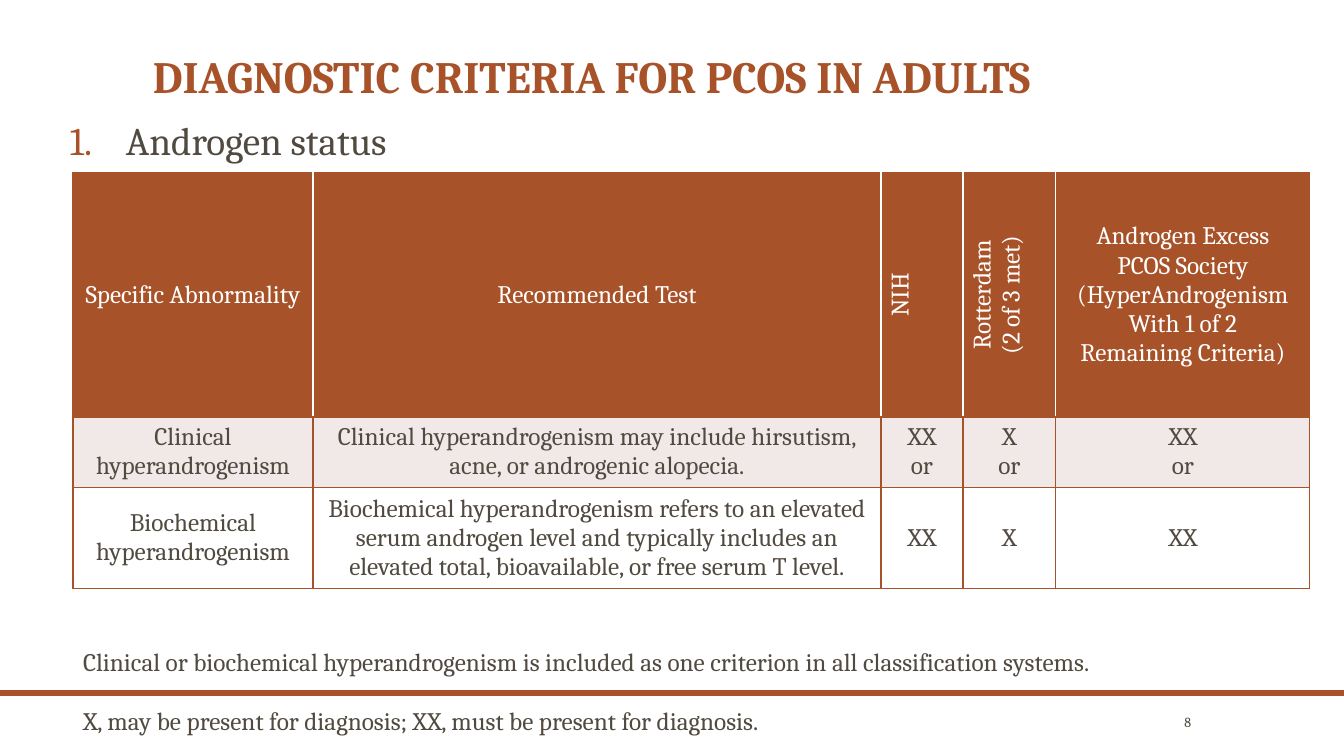
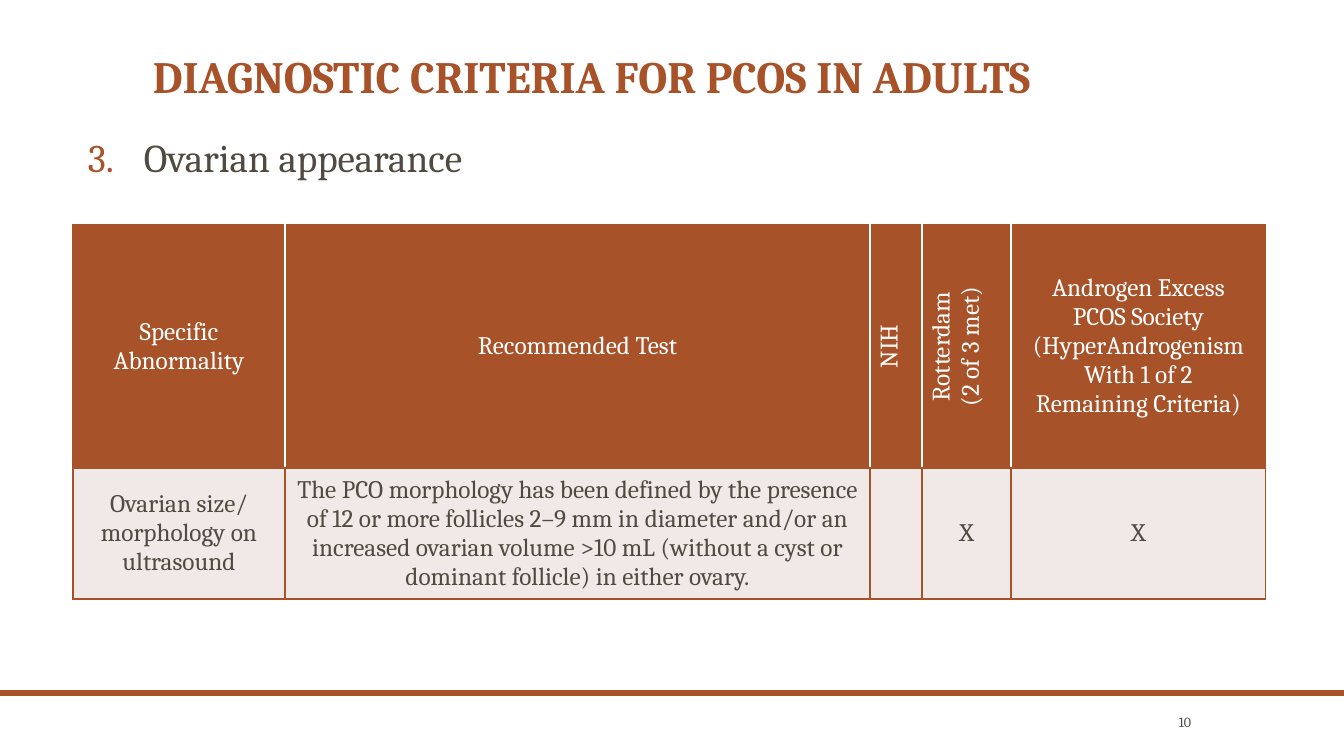
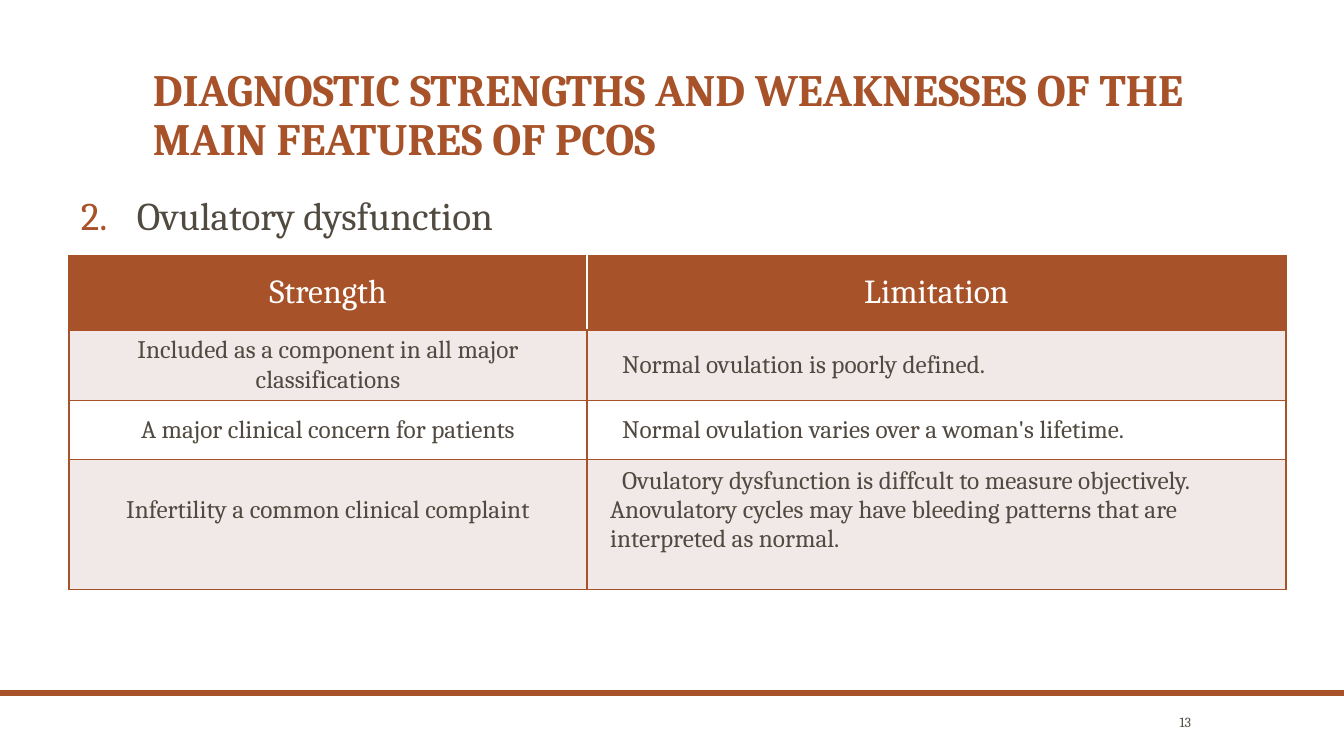
from lxml.etree import SubElement
from pptx import Presentation
from pptx.dml.color import RGBColor
from pptx.enum.shapes import MSO_SHAPE as Shape
from pptx.enum.text import MSO_ANCHOR as Anchor, MSO_AUTO_SIZE as AutoSize, PP_ALIGN as Align
from pptx.oxml.ns import qn
from pptx.util import Pt

WIDTH, HEIGHT = 1344, 756
EMU_PER_PX = 12192000 / WIDTH

RUST = RGBColor(0xA8, 0x52, 0x29)
INK = RGBColor(0x51, 0x4A, 0x40)
WHITE = RGBColor(0xFF, 0xFF, 0xFF)
BLUSH = RGBColor(0xF1, 0xE9, 0xE8)
FONT = "Cambria"

CRITERIA_TITLE = "DIAGNOSTIC CRITERIA FOR PCOS IN ADULTS"
FEATURES_TITLE = "DIAGNOSTIC STRENGTHS AND WEAKNESSES OF THE MAIN FEATURES OF PCOS"
CRITERIA_HEADER = [
    "Specific Abnormality",
    "Recommended Test",
    "NIH",
    "Rotterdam\v(2 of 3 met)",
    "Androgen Excess\vPCOS Society\v(HyperAndrogenism\vWith 1 of 2\vRemaining Criteria)",
]
VERTICAL_COLUMNS = (2, 3)
ANDROGEN_ROWS = [
    ["Clinical\vhyperandrogenism",
     "Clinical hyperandrogenism may include hirsutism, acne, or androgenic alopecia.",
     "XX\nor", "X\nor", "XX\nor"],
    ["Biochemical\vhyperandrogenism",
     "Biochemical hyperandrogenism refers to an elevated serum androgen level and typically "
     "includes an elevated total, bioavailable, or free serum T level.",
     "XX", "X", "XX"],
]
ANDROGEN_NOTE = (
    "Clinical or biochemical hyperandrogenism is included as one criterion in all "
    "classification systems.\n"
    "X, may be present for diagnosis; XX, must be present for diagnosis."
)
OVARIAN_ROWS = [
    ["Ovarian size/\nmorphology on\nultrasound",
     "The PCO morphology has been defined by the presence of 12 or more follicles 2–9 mm in "
     "diameter and/or an increased ovarian volume >10 mL (without a cyst or dominant follicle) "
     "in either ovary.",
     "", "X", "X"],
]
OVULATION_ROWS = [
    ["Strength", "Limitation"],
    ["Included as a component in all major classifications",
     "Normal ovulation is poorly defined."],
    ["A major clinical concern for patients",
     "Normal ovulation varies over a woman's lifetime."],
    ["Infertility a common clinical complaint",
     "Ovulatory dysfunction is diffcult to measure objectively.\v"
     "Anovulatory cycles may have bleeding patterns that are interpreted as normal."],
]


def px(length):
    return round(length * EMU_PER_PX)


def style(paragraph, size, color, bold=False, align=Align.LEFT):
    paragraph.alignment = align
    font = paragraph.font
    font.name, font.size, font.bold = FONT, Pt(size), bold
    font.color.rgb = color


def indent(paragraph, margin, first_line):
    properties = paragraph._p.get_or_add_pPr()
    properties.set("marL", str(px(margin)))
    properties.set("indent", str(px(first_line)))
    return properties


def add_solid(parent, color):
    SubElement(SubElement(parent, qn("a:solidFill")), qn("a:srgbClr"), val=str(color))


def add_text(slide, text, left, top, width, height, anchor=Anchor.TOP):
    box = slide.shapes.add_textbox(px(left), px(top), px(width), px(height))
    frame = box.text_frame
    frame.word_wrap = True
    frame.vertical_anchor = anchor
    frame.text = text
    return frame


def add_title(slide, text, height):
    paragraph = add_text(slide, text, 143, 42, 1058, height, Anchor.BOTTOM).paragraphs[0]
    paragraph.line_spacing = 0.9
    style(paragraph, 32, RUST, bold=True)


def add_numbered_heading(slide, number, text, left, top):
    paragraph = add_text(slide, text, left, top, 460, 66).paragraphs[0]
    paragraph.line_spacing = 0.9
    properties = indent(paragraph, 61, -56)
    bullet_color = SubElement(properties, qn("a:buClr"))
    SubElement(bullet_color, qn("a:srgbClr"), val=str(RUST))
    SubElement(properties, qn("a:buFont"), typeface="+mj-lt")
    SubElement(properties, qn("a:buAutoNum"), type="arabicPeriod", startAt=str(number))
    style(paragraph, 28, INK)


def add_page_number(slide, number):
    frame = add_text(slide, str(number), 1124, 708, 77, 26, Anchor.MIDDLE)
    frame.auto_size = AutoSize.TEXT_TO_FIT_SHAPE
    style(frame.paragraphs[0], 11, INK, align=Align.RIGHT)


def add_band(slide):
    band = slide.shapes.add_shape(Shape.RECTANGLE, 0, px(690), px(WIDTH), px(6))
    band.shadow.inherit = False
    band.fill.solid()
    band.fill.fore_color.rgb = RUST
    band.line.fill.background()


def set_borders(cell, colors):
    properties = cell._tc.get_or_add_tcPr()
    for side, color in zip("LRTB", colors):
        line = SubElement(properties, qn(f"a:ln{side}"), w=str(Pt(1)))
        if color is None:
            SubElement(line, qn("a:noFill"))
        else:
            add_solid(line, color)


def fill_cell(cell, text, size, color, align=Align.CENTER):
    cell.vertical_anchor = Anchor.MIDDLE
    cell.text_frame.text = text
    for paragraph in cell.text_frame.paragraphs:
        style(paragraph, size, color, align=align)


def add_grid(slide, left, top, widths, heights):
    frame = slide.shapes.add_table(len(heights), len(widths), px(left), px(top),
                                   px(sum(widths)), px(sum(heights)))
    table = frame.table
    table.horz_banding = False
    for column, width in zip(table.columns, widths):
        column.width = px(width)
    for row, height in zip(table.rows, heights):
        row.height = px(height)
    return table


def add_data_table(slide, rows, left, top, widths, heights, header_size=18):
    table = add_grid(slide, left, top, widths, heights)
    last = len(widths) - 1
    for row_index, texts in enumerate(rows):
        is_header = row_index == 0
        divider = WHITE if is_header else RUST
        background = RUST if is_header else BLUSH if row_index % 2 else WHITE
        for column_index, text in enumerate(texts):
            cell = table.cell(row_index, column_index)
            set_borders(cell, (divider if column_index > 0 else RUST,
                               divider if column_index < last else RUST, RUST, RUST))
            cell.fill.solid()
            cell.fill.fore_color.rgb = background
            fill_cell(cell, text, header_size if is_header else 18,
                      WHITE if is_header else INK)
    return table


def add_criteria_table(slide, rows, top, widths, heights):
    table = add_data_table(slide, [CRITERIA_HEADER] + rows, 73, top, widths, heights)
    for column_index in VERTICAL_COLUMNS:
        table.cell(0, column_index)._tc.get_or_add_tcPr().set("vert", "vert270")


def add_note_table(slide, text):
    table = add_grid(slide, 73, 643, [1237], [98])
    table.first_row = False
    cell = table.cell(0, 0)
    set_borders(cell, [None] * 4)
    cell.fill.background()
    fill_cell(cell, text, 18, INK, Align.LEFT)
    cell.text_frame.paragraphs[1].space_before = Pt(21)


def add_ovulation_table(slide):
    table = add_data_table(slide, OVULATION_ROWS, 69, 256, [518, 699], [74, 69, 59, 126], 24)
    for row_index in range(1, len(OVULATION_ROWS)):
        paragraph = table.cell(row_index, 1).text_frame.paragraphs[0]
        paragraph.alignment = Align.LEFT
        indent(paragraph, 13, 12)
    for column_index in range(2):
        table.cell(3, column_index).margin_bottom = px(34)


def add_page(presentation, title, number, title_height=66):
    slide = presentation.slides.add_slide(presentation.slide_layouts[6])
    add_band(slide)
    add_title(slide, title, title_height)
    add_page_number(slide, number)
    return slide


def main():
    presentation = Presentation()
    presentation.slide_width = px(WIDTH)
    presentation.slide_height = px(HEIGHT)

    androgen = add_page(presentation, CRITERIA_TITLE, 8)
    add_numbered_heading(androgen, 1, "Androgen status", 55, 117)
    add_criteria_table(androgen, ANDROGEN_ROWS, 173, [240, 568, 82, 93, 254], [244, 68, 98])
    add_note_table(androgen, ANDROGEN_NOTE)

    ovarian = add_page(presentation, CRITERIA_TITLE, 10)
    add_numbered_heading(ovarian, 3, "Ovarian appearance", 73, 134)
    add_criteria_table(ovarian, OVARIAN_ROWS, 225, [212, 585, 52, 89, 255], [243, 127])

    ovulation = add_page(presentation, FEATURES_TITLE, 13, 128)
    add_numbered_heading(ovulation, 2, "Ovulatory dysfunction", 66, 192)
    add_ovulation_table(ovulation)

    presentation.save("out.pptx")


if __name__ == "__main__":
    main()
